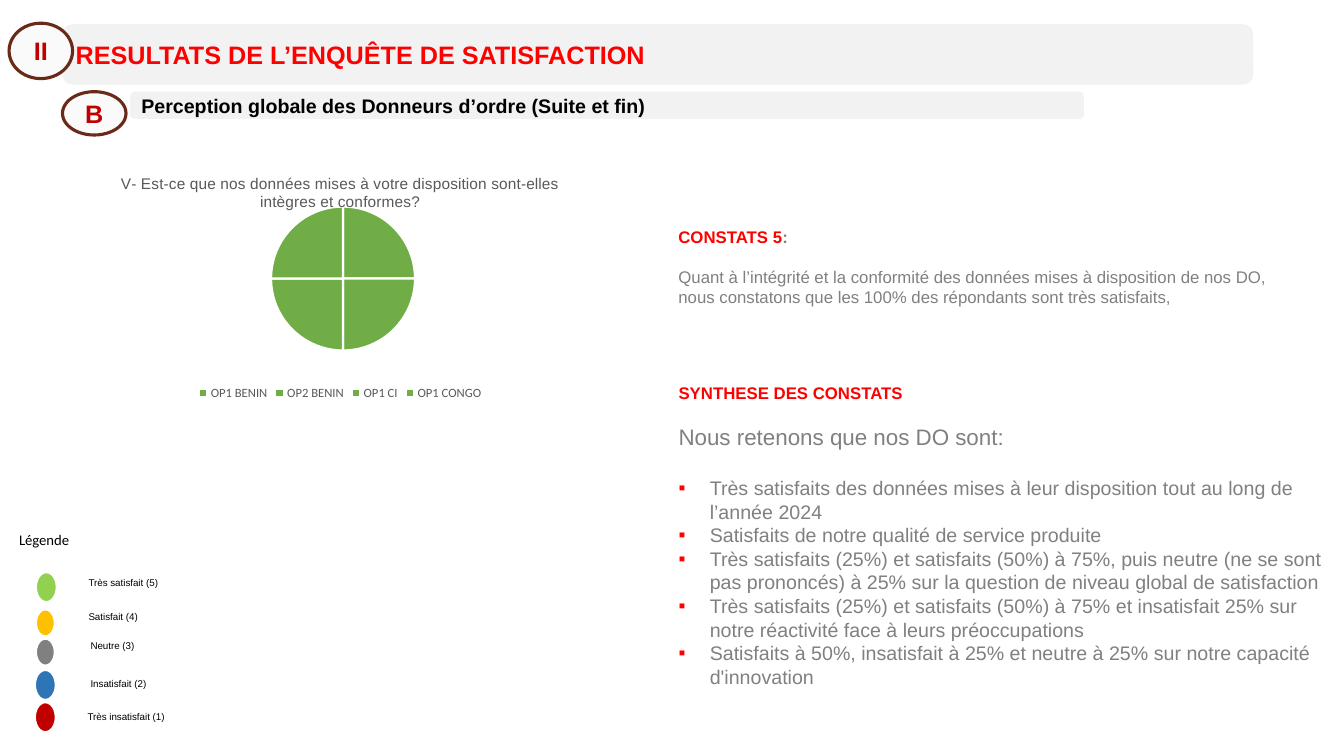
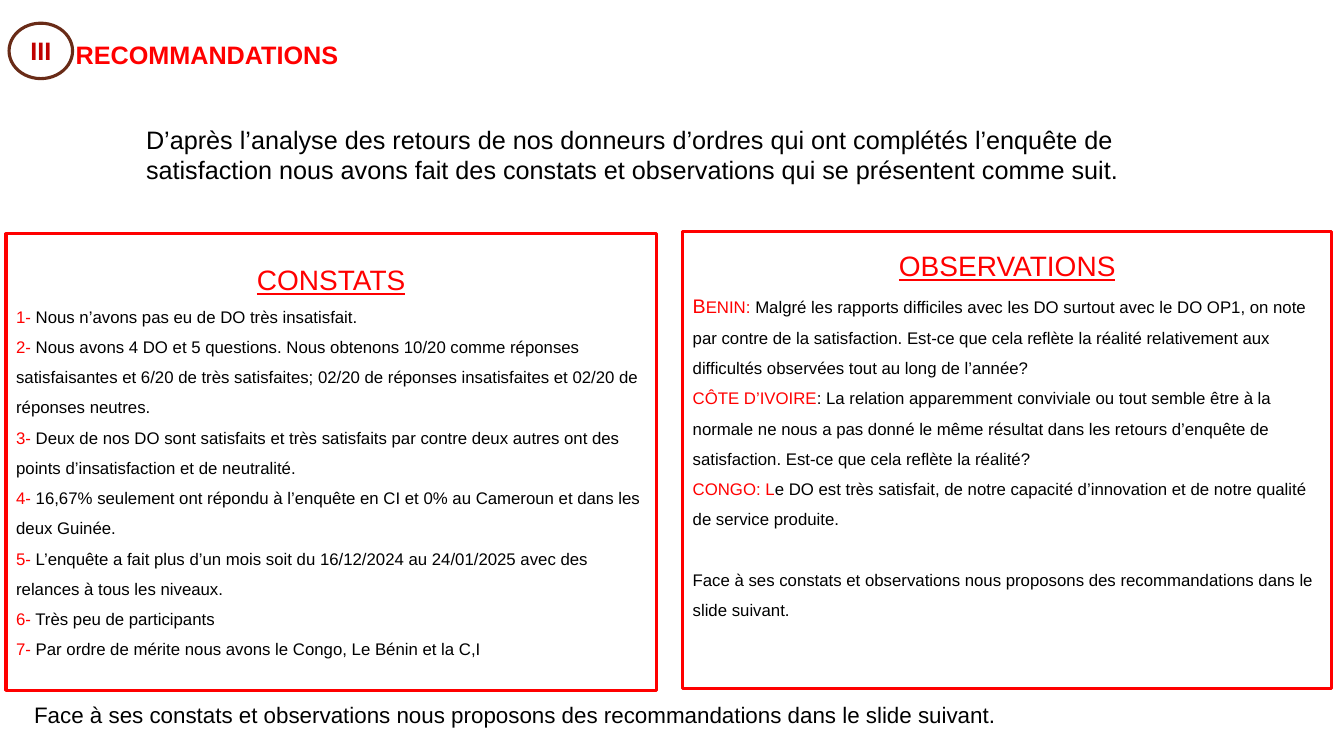
from dataclasses import dataclass

from lxml.etree import SubElement
from pptx import Presentation
from pptx.chart.data import CategoryChartData
from pptx.dml.color import RGBColor
from pptx.enum.chart import XL_CHART_TYPE, XL_LEGEND_POSITION
from pptx.enum.shapes import MSO_SHAPE
from pptx.enum.text import MSO_ANCHOR, MSO_AUTO_SIZE, PP_ALIGN
from pptx.oxml import parse_xml
from pptx.oxml.ns import nsdecls, qn
from pptx.util import Inches, Pt

RED = RGBColor(0xFF, 0x00, 0x00)
DARK_RED = RGBColor(0xC0, 0x00, 0x00)
BROWN = RGBColor(0x69, 0x2B, 0x17)
BLACK = RGBColor(0x00, 0x00, 0x00)
WHITE = RGBColor(0xFF, 0xFF, 0xFF)
BAND_GREY = RGBColor(0xF2, 0xF2, 0xF2)
BADGE_GREY = RGBColor(0xFA, 0xFA, 0xFA)
GREY = RGBColor(0x80, 0x80, 0x80)
CHART_GREY = RGBColor(0x59, 0x59, 0x59)
PIE_GREEN = RGBColor(0x70, 0xAD, 0x47)
LIGHT_GREEN = RGBColor(0x92, 0xD0, 0x50)
AMBER = RGBColor(0xFF, 0xC0, 0x00)
BLUE = RGBColor(0x2E, 0x75, 0xB6)

TITLE_CONTENT, TWO_CONTENT = 1, 3


@dataclass(frozen=True)
class Box:
    left: float
    top: float
    width: float
    height: float

    def lengths(self):
        return [Inches(n) for n in (self.left, self.top, self.width, self.height)]


@dataclass(frozen=True)
class Rating:
    label: str
    color: RGBColor
    dot: Box
    label_left: float
    label_top: float


@dataclass(frozen=True)
class Finding:
    lead: str
    text: str
    before: float = 0


TITLE_BAND = Box(0.62, 0.24, 11.81, 0.6)
TITLE_BADGE = Box(0.09, 0.23, 0.63, 0.55)

RATINGS = [
    Rating("Très satisfait (5)", LIGHT_GREEN, Box(0.36, 5.68, 0.2, 0.29), 0.78, 5.67),
    Rating("Satisfait (4)", AMBER, Box(0.36, 6.05, 0.18, 0.26), 0.78, 6.01),
    Rating("Neutre (3)", GREY, Box(0.36, 6.34, 0.18, 0.26), 0.8, 6.3),
    Rating("Insatisfait (2)", BLUE, Box(0.35, 6.65, 0.2, 0.29), 0.8, 6.67),
    Rating("Très insatisfait (1)", DARK_RED, Box(0.35, 6.97, 0.2, 0.29), 0.77, 7.0),
]

SUMMARY = [
    "Très satisfaits des données mises à leur disposition tout au long de l’année 2024",
    "Satisfaits de notre qualité de service produite",
    "Très satisfaits (25%) et satisfaits (50%) à 75%, puis neutre (ne se sont pas prononcés) "
    "à 25% sur la question de niveau global de satisfaction",
    "Très satisfaits (25%) et satisfaits (50%) à 75% et insatisfait 25% sur notre réactivité "
    "face à leurs préoccupations",
    "Satisfaits à 50%, insatisfait à 25% et neutre à 25% sur notre capacité d'innovation",
]

CONSTATS = [
    "Nous n’avons pas eu de DO très insatisfait.",
    "Nous avons 4 DO et 5 questions. Nous obtenons 10/20 comme réponses satisfaisantes et 6/20 "
    "de très satisfaites; 02/20 de réponses insatisfaites et 02/20 de réponses neutres.",
    "Deux de nos DO sont satisfaits et très satisfaits par contre deux autres ont des points "
    "d’insatisfaction et de neutralité.",
    "16,67% seulement ont répondu à l’enquête en CI et 0% au Cameroun et dans les deux Guinée.",
    "L’enquête a fait plus d’un mois soit du 16/12/2024 au 24/01/2025 avec des relances à tous "
    "les niveaux.",
    "Très peu de participants",
    "Par ordre de mérite nous avons le Congo, Le Bénin et la C,I",
]

NEXT_STEP = (
    "Face à ses constats et observations nous proposons des recommandations dans le slide suivant."
)

OBSERVATIONS = [
    Finding(
        "ENIN: ",
        "Malgré les rapports difficiles avec les DO surtout avec le DO OP1, on note par contre de "
        "la satisfaction. Est-ce que cela reflète la réalité relativement aux difficultés "
        "observées tout au long de l’année?",
    ),
    Finding(
        "CÔTE D’IVOIRE",
        ": La relation apparemment conviviale ou tout semble être à la normale ne nous a pas donné "
        "le même résultat dans les retours d’enquête de satisfaction. Est-ce que cela reflète la "
        "réalité?",
    ),
    Finding(
        "CONGO: L",
        "e DO est très satisfait, de notre capacité d’innovation et de notre qualité de service "
        "produite.",
    ),
    Finding("", NEXT_STEP, before=21.6),
]


def set_bullet(paragraph, bullet: str) -> None:
    properties = paragraph._p.get_or_add_pPr()
    indent = Inches(0.31) if bullet else 0
    properties.set("marL", str(indent))
    properties.set("indent", str(-indent))
    if bullet:
        color = SubElement(properties, qn("a:buClr"))
        SubElement(color, qn("a:srgbClr")).set("val", str(RED))
        SubElement(properties, qn("a:buFont")).set("typeface", "Arial")
        SubElement(properties, qn("a:buChar")).set("char", bullet)
    else:
        SubElement(properties, qn("a:buNone"))


def write(frame, text: str, *, size: float = 12, color: RGBColor = BLACK, bold: bool = False,
          underline: bool = False, font: str = "Arial", align=PP_ALIGN.LEFT, before: float = 0,
          spacing: float = 1, bullet: str = "", same_line: bool = False) -> None:
    paragraph = frame.paragraphs[-1]
    if not same_line:
        if paragraph.runs:
            paragraph = frame.add_paragraph()
        set_bullet(paragraph, bullet)
        paragraph.alignment = align
        paragraph.space_before = Pt(before)
        paragraph.line_spacing = spacing
    run = paragraph.add_run()
    run.text = text
    run.font.name = font
    run.font.size = Pt(size)
    run.font.bold = bold
    run.font.underline = underline
    run.font.color.rgb = color


def place(placeholder, box: Box):
    placeholder.left, placeholder.top, placeholder.width, placeholder.height = box.lengths()
    frame = placeholder.text_frame
    frame.auto_size = MSO_AUTO_SIZE.NONE
    frame.word_wrap = True
    return frame


def add_text_box(slide, box: Box):
    frame = slide.shapes.add_textbox(*box.lengths()).text_frame
    frame.word_wrap = True
    return frame


def add_filled(slide, kind, box: Box, fill: RGBColor, line: RGBColor | None = None,
               line_width: float = 1):
    shape = slide.shapes.add_shape(kind, *box.lengths())
    shape.shadow.inherit = False
    shape.fill.solid()
    shape.fill.fore_color.rgb = fill
    if line is None:
        shape.line.fill.background()
    else:
        shape.line.color.rgb = line
        shape.line.width = Pt(line_width)
    return shape


def add_badge(slide, label: str, box: Box, fill: RGBColor) -> None:
    frame = add_filled(slide, MSO_SHAPE.OVAL, box, fill, BROWN, 2.25).text_frame
    frame.word_wrap = False
    frame.vertical_anchor = MSO_ANCHOR.MIDDLE
    write(frame, label, size=18, color=DARK_RED, bold=True, align=PP_ALIGN.CENTER)


def add_heading(slide, number: str, text: str, band: RGBColor, badge: RGBColor) -> None:
    background = add_filled(slide, MSO_SHAPE.ROUNDED_RECTANGLE, TITLE_BAND, band)
    title = slide.shapes.title
    background.element.addnext(title.element)
    frame = place(title, Box(0.65, TITLE_BAND.top, 11.75, TITLE_BAND.height))
    frame.vertical_anchor = MSO_ANCHOR.MIDDLE
    write(frame, text, size=18, color=RED, bold=True)
    add_badge(slide, number, TITLE_BADGE, badge)


def add_satisfaction_pie(slide) -> None:
    answers = CategoryChartData()
    answers.categories = ["OP1 BENIN", "OP2 BENIN", "OP1 CI", "OP1 CONGO"]
    answers.add_series("Series 1", [25] * 4)
    box = Box(0.62, 1.59, 5.51, 2.42)
    chart = slide.shapes.add_chart(XL_CHART_TYPE.PIE, *box.lengths(), answers).chart
    chart.font.name = "Calibri"
    chart.font.size = Pt(10)
    chart.has_title = True
    write(
        chart.chart_title.text_frame,
        "V- Est-ce que nos données mises à votre disposition sont-elles intègres et conformes?",
        size=11, color=CHART_GREY, align=PP_ALIGN.CENTER,
    )
    chart.chart_title.include_in_layout = False
    chart.has_legend = True
    legend = chart.legend
    legend.position = XL_LEGEND_POSITION.BOTTOM
    legend.include_in_layout = False
    legend.font.name = "Calibri"
    legend.font.size = Pt(9)
    legend.font.color.rgb = CHART_GREY
    plot = chart.plots[0]
    plot.vary_by_categories = True
    for index in range(4):
        slice_format = plot.series[0].points[index].format
        slice_format.fill.solid()
        slice_format.fill.fore_color.rgb = PIE_GREEN
        slice_format.line.color.rgb = WHITE
        slice_format.line.width = Pt(1.5)
    area = chart.element.find(".//" + qn("c:plotArea"))
    for automatic in area.findall(qn("c:layout")):
        area.remove(automatic)
    area.insert(0, parse_xml(
        f'<c:layout {nsdecls("c")}><c:manualLayout><c:layoutTarget val="inner"/>'
        '<c:xMode val="edge"/><c:yMode val="edge"/><c:x val="0.03"/><c:y val="0.19"/>'
        '<c:w val="0.95"/><c:h val="0.59"/></c:manualLayout></c:layout>'
    ))


def add_rating_legend(slide) -> None:
    write(add_text_box(slide, Box(0.09, 5.22, 1.78, 0.34)), "Légende", size=10.5, font="Calibri")
    for rating in RATINGS:
        add_filled(slide, MSO_SHAPE.OVAL, rating.dot, rating.color, WHITE)
        label = add_text_box(slide, Box(rating.label_left, rating.label_top, 1.47, 0.26))
        write(label, rating.label, size=7)


def add_panel(placeholder, heading: str, box: Box, margin_top: float):
    frame = place(placeholder, box)
    frame.vertical_anchor = MSO_ANCHOR.TOP
    frame.margin_top = Inches(margin_top)
    placeholder.fill.solid()
    placeholder.fill.fore_color.rgb = WHITE
    placeholder.line.color.rgb = RED
    placeholder.line.width = Pt(2.25)
    write(frame, heading, size=20, color=RED, underline=True, align=PP_ALIGN.CENTER, spacing=1.5)
    return frame


def build_results(deck) -> None:
    slide = deck.slides.add_slide(deck.slide_layouts[TITLE_CONTENT])
    add_heading(slide, "II", "RESULTATS DE L’ENQUÊTE DE SATISFACTION", BAND_GREY, BADGE_GREY)
    subtitle = add_filled(
        slide, MSO_SHAPE.ROUNDED_RECTANGLE, Box(1.29, 0.91, 9.46, 0.27), BAND_GREY
    ).text_frame
    subtitle.vertical_anchor = MSO_ANCHOR.MIDDLE
    write(subtitle, "Perception globale des Donneurs d’ordre (Suite et fin)", size=14, bold=True)
    add_badge(slide, "B", Box(0.62, 0.91, 0.63, 0.43), BADGE_GREY)
    add_satisfaction_pie(slide)
    add_rating_legend(slide)

    finding = add_text_box(slide, Box(6.63, 2.2, 6.31, 1.11))
    write(finding, "CONSTATS 5", color=RED, bold=True)
    write(finding, ":", color=GREY, bold=True, same_line=True)
    write(
        finding,
        "Quant à l’intégrité et la conformité des données mises à disposition de nos DO, nous "
        "constatons que les 100% des répondants sont très satisfaits,",
        color=GREY, before=14,
    )

    summary = place(slide.placeholders[1], Box(6.63, 3.75, 6.7, 3.75))
    write(summary, "SYNTHESE DES CONSTATS", color=RED, bold=True)
    write(summary, "Nous retenons que nos DO sont:", size=16, color=GREY, before=14)
    for index, point in enumerate(SUMMARY):
        write(summary, point, size=14, color=GREY, bullet="▪", before=0 if index else 19)


def build_recommendations(deck) -> None:
    slide = deck.slides.add_slide(deck.slide_layouts[TWO_CONTENT])
    add_heading(slide, "III", "RECOMMANDATIONS", WHITE, WHITE)
    write(
        add_text_box(slide, Box(1.35, 1.18, 11.08, 0.71)),
        "D’après l’analyse des retours de nos donneurs d’ordres qui ont complétés l’enquête de "
        "satisfaction nous avons fait des constats et observations qui se présentent comme suit.",
        size=18,
    )

    constats = add_panel(slide.placeholders[1], "CONSTATS", Box(0.06, 2.32, 6.45, 4.53), 0.12)
    for number, text in enumerate(CONSTATS, start=1):
        write(constats, f"{number}-", color=RED, spacing=1.5)
        write(constats, f" {text}", same_line=True)

    observations = add_panel(
        slide.placeholders[2], "OBSERVATIONS", Box(6.77, 2.3, 6.44, 4.53), 0
    )
    write(observations, "B", size=14, color=RED, spacing=1.5)
    for index, finding in enumerate(OBSERVATIONS):
        if finding.lead:
            write(observations, finding.lead, color=RED, spacing=1.5, same_line=index == 0)
        write(observations, finding.text, spacing=1.5, before=finding.before,
              same_line=bool(finding.lead))

    write(add_text_box(slide, Box(0.24, 6.91, 10.75, 0.37)), NEXT_STEP, size=16)


def main() -> None:
    deck = Presentation()
    deck.slide_width, deck.slide_height = Inches(13.33), Inches(7.5)
    build_results(deck)
    build_recommendations(deck)
    deck.save("out.pptx")


if __name__ == "__main__":
    main()
